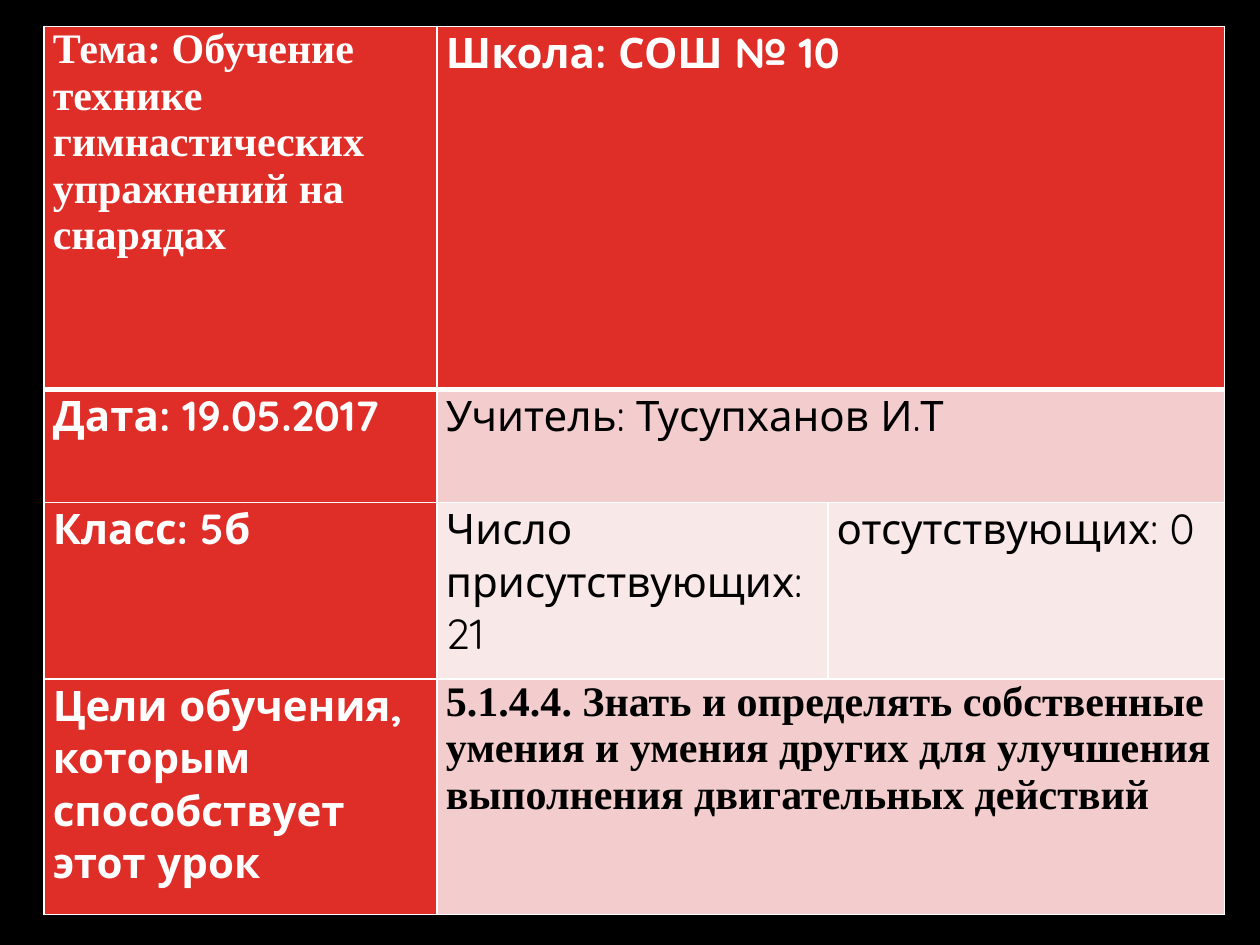
from dataclasses import dataclass

from lxml import etree
from pptx import Presentation
from pptx.dml.color import RGBColor
from pptx.oxml.ns import qn
from pptx.table import Table, _Cell
from pptx.util import Inches, Pt

BLANK_LAYOUT = 6


@dataclass(frozen=True)
class Theme:
    background: str = "000000"
    accent: str = "DF2E28"
    band_dark: str = "F3CDCD"
    band_light: str = "F9E8E8"
    light_text: str = "FFFFFF"
    dark_text: str = "000000"
    border: str = "FFFFFF"
    sans: str = "Quicksand"
    serif: str = "Times New Roman"
    size: float = 24
    thin: float = 1
    thick: float = 3
    side_margin: float = 0.07


THEME = Theme()


@dataclass(frozen=True)
class Entry:
    row: int
    column: int
    text: str
    fill: str = THEME.accent
    color: str = THEME.light_text
    font: str = THEME.sans
    bold: bool = True
    span: int = 1


TABLE_LEFT, TABLE_TOP = 0.35, 0.21
COLUMN_WIDTHS = (3.12, 3.1, 3.15)
ROW_HEIGHTS = (2.88, 0.9, 1.4, 1.87)

ENTRIES = (
    Entry(0, 0, "Тема: Обучение технике гимнастических упражнений на снарядах",
          font=THEME.serif),
    Entry(0, 1, "Школа: СОШ № 10", span=2),
    Entry(1, 0, "Дата: 19.05.2017"),
    Entry(1, 1, "Учитель: Тусупханов И.Т", THEME.band_dark,
          THEME.dark_text, bold=False, span=2),
    Entry(2, 0, "Класс: 5б"),
    Entry(2, 1, "Число присутствующих:\n21", THEME.band_light,
          THEME.dark_text, bold=False),
    Entry(2, 2, "отсутствующих: 0", THEME.band_light,
          THEME.dark_text, bold=False),
    Entry(3, 0, "Цели обучения, которым способствует этот урок"),
    Entry(3, 1, "5.1.4.4. Знать и определять собственные умения и умения "
          "других для улучшения выполнения двигательных действий",
          THEME.band_dark, THEME.dark_text, THEME.serif, span=2),
)


def add_borders(cell: _Cell, row: int) -> None:
    properties = cell._tc.get_or_add_tcPr()
    widths = {
        "L": THEME.thin,
        "R": THEME.thin,
        "T": THEME.thick if row == 1 else THEME.thin,
        "B": THEME.thick if row == 0 else THEME.thin,
    }
    for side, width in widths.items():
        line = etree.SubElement(properties, qn(f"a:ln{side}"), w=str(Pt(width)))
        paint = etree.SubElement(line, qn("a:solidFill"))
        etree.SubElement(paint, qn("a:srgbClr"), val=THEME.border)


def fill_entry(table: Table, entry: Entry) -> None:
    last_column = entry.column + entry.span - 1
    for column in range(entry.column, last_column + 1):
        cell = table.cell(entry.row, column)
        add_borders(cell, entry.row)
        cell.fill.solid()
        cell.fill.fore_color.rgb = RGBColor.from_string(entry.fill)

    cell = table.cell(entry.row, entry.column)
    if entry.span > 1:
        cell.merge(table.cell(entry.row, last_column))
    cell.margin_left = cell.margin_right = Inches(THEME.side_margin)
    cell.margin_top = cell.margin_bottom = 0
    cell.text_frame.text = entry.text
    for paragraph in cell.text_frame.paragraphs:
        for run in paragraph.runs:
            run.font.name = entry.font
            run.font.size = Pt(THEME.size)
            run.font.bold = entry.bold
            run.font.color.rgb = RGBColor.from_string(entry.color)


def main() -> None:
    presentation = Presentation()
    presentation.slide_width, presentation.slide_height = Inches(10), Inches(7.5)
    slide = presentation.slides.add_slide(presentation.slide_layouts[BLANK_LAYOUT])
    slide.background.fill.solid()
    slide.background.fill.fore_color.rgb = RGBColor.from_string(THEME.background)

    lesson_plan = slide.shapes.add_table(
        len(ROW_HEIGHTS), len(COLUMN_WIDTHS),
        Inches(TABLE_LEFT), Inches(TABLE_TOP),
        Inches(sum(COLUMN_WIDTHS)), Inches(sum(ROW_HEIGHTS)),
    ).table
    lesson_plan.first_col = True
    for column, width in zip(lesson_plan.columns, COLUMN_WIDTHS):
        column.width = Inches(width)
    for row, height in zip(lesson_plan.rows, ROW_HEIGHTS):
        row.height = Inches(height)
    for entry in ENTRIES:
        fill_entry(lesson_plan, entry)

    presentation.save("out.pptx")


if __name__ == "__main__":
    main()
